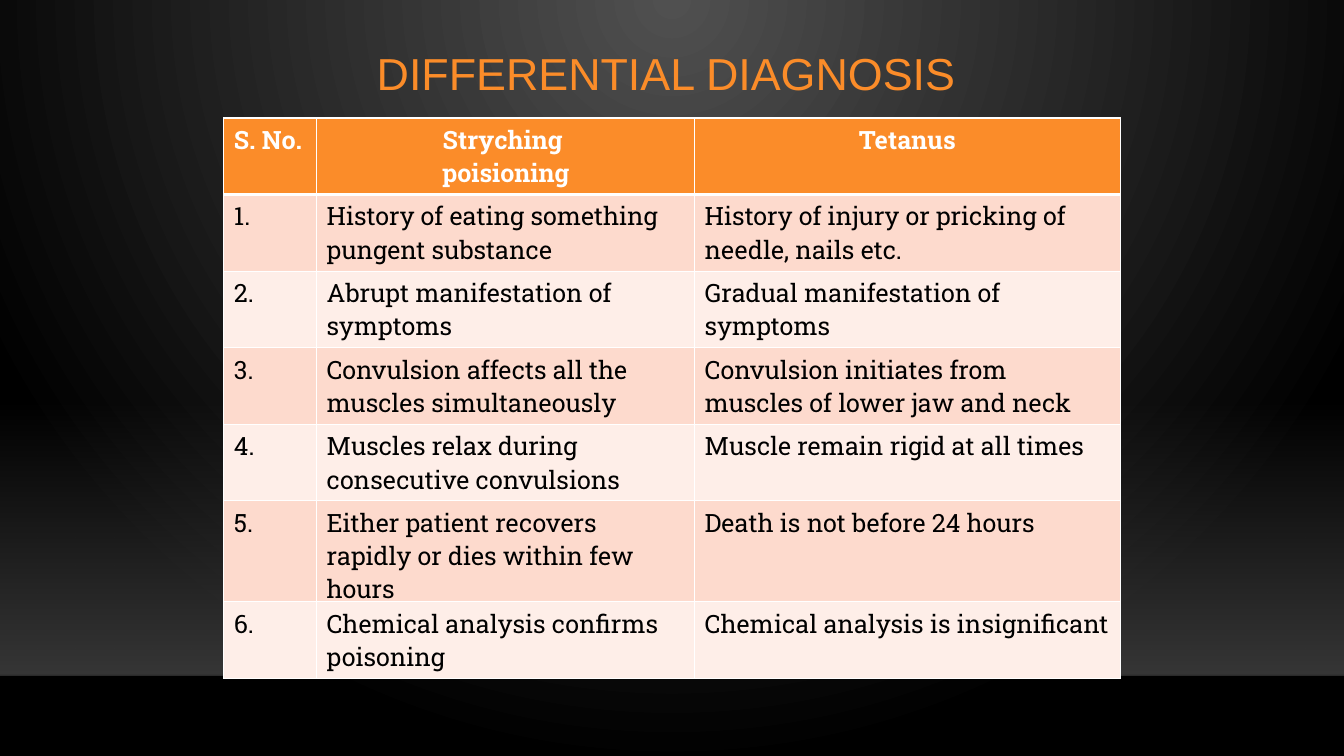
from lxml.etree import SubElement
from pptx import Presentation
from pptx.dml.color import RGBColor
from pptx.enum.shapes import MSO_CONNECTOR as Connector, MSO_SHAPE as Shape
from pptx.enum.text import MSO_ANCHOR as Anchor, PP_ALIGN as Align
from pptx.oxml import parse_xml
from pptx.oxml.ns import nsdecls, qn
from pptx.util import Inches, Pt

ORANGE = RGBColor(0xFB, 0x8C, 0x29)
PEACH = RGBColor(0xFD, 0xDA, 0xCD)
CREAM = RGBColor(0xFE, 0xEE, 0xE8)
WHITE = RGBColor(0xFF, 0xFF, 0xFF)
BLACK = RGBColor(0, 0, 0)
HORIZON = RGBColor(0, 0, 1)
GLOW = RGBColor(0x50, 0x50, 0x50)
FLOOR = RGBColor(0x45, 0x45, 0x45)

WIDTH, HEIGHT = Inches(13.33), Inches(7.5)
HORIZON_Y = Inches(6.7)
COLUMNS = (0.92, 3.75, 4.22)
ROW_HEIGHT = 0.76

TITLE = "DIFFERENTIAL DIAGNOSIS "
HEADINGS = ("S. No.", "Stryching \npoisioning", "Tetanus")
FINDINGS = (
    ("History of eating something pungent substance",
     "History of injury or pricking of needle, nails etc."),
    ("Abrupt manifestation of symptoms", "Gradual manifestation of symptoms"),
    ("Convulsion affects all the muscles simultaneously",
     "Convulsion initiates from muscles of lower jaw and neck"),
    ("Muscles relax during consecutive convulsions",
     "Muscle remain rigid at all times"),
    ("Either patient recovers rapidly or dies within few hours",
     "Death is not before 24 hours"),
    ("Chemical analysis confirms poisoning",
     "Chemical analysis is insignificant"),
)


def set_format(target, **values):
    """Set each given attribute on the target."""
    for name, value in values.items():
        setattr(target, name, value)


def set_gradient(fill, owner, stops, direction):
    """Give the owner's fill a gradient of (position, colour, alpha) stops."""
    fill.solid()
    solid = next(owner.iter(qn("a:solidFill")))
    marks = "".join(
        f'<a:gs pos="{position * 1000}"><a:srgbClr val="{colour}">'
        f'<a:alpha val="{alpha * 1000}"/></a:srgbClr></a:gs>'
        for position, colour, alpha in stops)
    solid.getparent().replace(solid, parse_xml(
        f'<a:gradFill {nsdecls("a")} rotWithShape="1">'
        f'<a:gsLst>{marks}</a:gsLst>{direction}</a:gradFill>'))


def add_backdrop(slide):
    """Draw the spotlit wall, the floor glow and the horizon line."""
    set_gradient(slide.background.fill, slide.element,
                 ((0, GLOW, 100), (100, BLACK, 100)),
                 '<a:path path="circle"><a:fillToRect l="43000" t="0" '
                 'r="43000" b="100000"/></a:path>')
    top = Inches(3.96)
    floor = slide.shapes.add_shape(Shape.RECTANGLE, 0, top, WIDTH, HORIZON_Y - top)
    floor.shadow.inherit = False
    floor.line.fill.background()
    set_gradient(floor.fill, floor.element.spPr,
                 ((0, FLOOR, 0), (100, FLOOR, 80)),
                 '<a:lin ang="5400000" scaled="0"/>')
    horizon = slide.shapes.add_connector(
        Connector.STRAIGHT, 0, HORIZON_Y, WIDTH, HORIZON_Y)
    horizon.line.width = Pt(1)
    horizon.line.color.rgb = HORIZON
    properties = horizon.element.spPr
    SubElement(next(properties.iter(qn("a:srgbClr"))), qn("a:alpha"), val="20000")
    SubElement(properties, qn("a:effectLst"))


def add_title(slide, left, top, width, height):
    """Write the centred slide title in the given box."""
    title = slide.shapes.add_textbox(left, top, width, height).text_frame
    set_format(title, word_wrap=True, vertical_anchor=Anchor.MIDDLE, text=TITLE)
    heading = title.paragraphs[0]
    set_format(heading, alignment=Align.CENTER, line_spacing=0.9)
    set_format(heading.font, name="Arial", size=Pt(32))
    heading.font.color.rgb = ORANGE


def set_borders(cell, **widths):
    """Draw white cell borders of the given point widths."""
    for side, width in widths.items():
        border = SubElement(cell._tc.get_or_add_tcPr(), qn(f"a:ln{side}"),
                            w=str(Pt(width)))
        SubElement(SubElement(border, qn("a:solidFill")), qn("a:srgbClr"),
                   val=str(WHITE))


def fill_cell(cell, text, fill, ink, bold, alignment, bottom):
    """Write and style one table cell."""
    set_borders(cell, L=1, R=1, T=bottom if not bold and bottom > 1 else 1, B=bottom)
    cell.fill.solid()
    cell.fill.fore_color.rgb = fill
    cell.text = text
    for paragraph in cell.text_frame.paragraphs:
        paragraph.alignment = alignment
        set_format(paragraph.font, name="Roboto Slab", size=Pt(18), bold=bold)
        paragraph.font.color.rgb = ink


def add_comparison(slide, left, top):
    """Build the comparison table from its top left corner."""
    rows = [HEADINGS] + [(f"{number}.", *pair)
                         for number, pair in enumerate(FINDINGS, 1)]
    table = slide.shapes.add_table(
        len(rows), len(COLUMNS), left, top, Inches(sum(COLUMNS)),
        Inches(ROW_HEIGHT * len(rows))).table
    for column, width in zip(table.columns, COLUMNS):
        column.width = Inches(width)
    for r, texts in enumerate(rows):
        table.rows[r].height = Inches(ROW_HEIGHT)
        header = r == 0
        fill = ORANGE if header else PEACH if r % 2 else CREAM
        for c, text in enumerate(texts):
            fill_cell(table.cell(r, c), text, fill,
                      ink=WHITE if header else BLACK, bold=header,
                      alignment=Align.CENTER if header and c else Align.LEFT,
                      bottom=3 if header else 1)


def main():
    """Build and save the slide."""
    deck = Presentation()
    set_format(deck, slide_width=WIDTH, slide_height=HEIGHT)
    slide = deck.slides.add_slide(deck.slide_layouts[6])
    add_backdrop(slide)
    add_title(slide, Inches(1.59), Inches(0.18), Inches(10.16), Inches(1.15))
    add_comparison(slide, Inches(2.22), Inches(1.17))
    deck.save("out.pptx")


if __name__ == "__main__":
    main()
